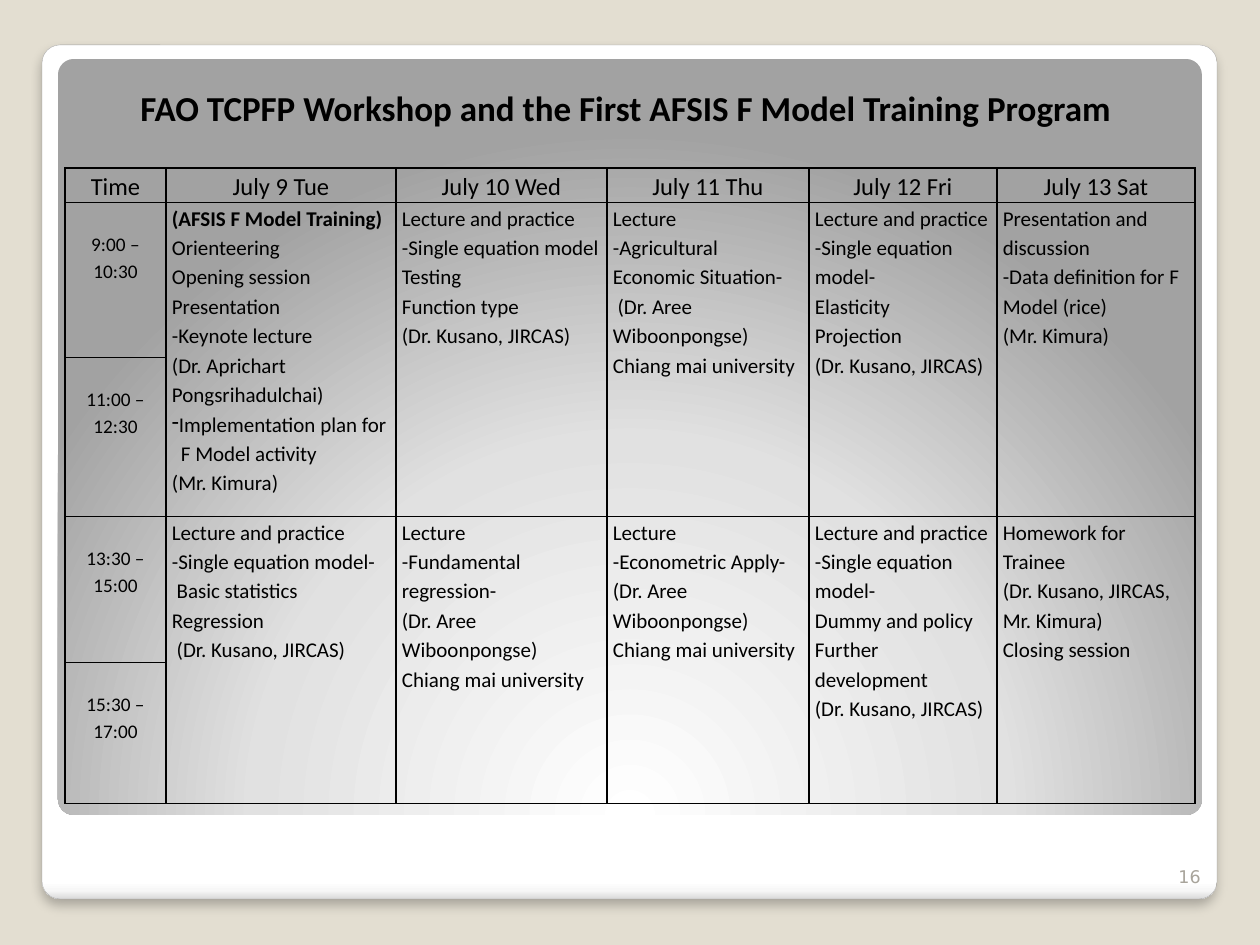
from lxml import etree
from pptx import Presentation
from pptx.dml.color import RGBColor
from pptx.enum.shapes import MSO_SHAPE
from pptx.enum.text import MSO_ANCHOR, PP_ALIGN
from pptx.oxml import parse_xml
from pptx.oxml.ns import qn
from pptx.util import Pt

PX = 914400 / 126
NS = 'xmlns:a="http://schemas.openxmlformats.org/drawingml/2006/main"'
LEFT, CENTER, RIGHT = PP_ALIGN.LEFT, PP_ALIGN.CENTER, PP_ALIGN.RIGHT
TOP, MIDDLE, BOTTOM = MSO_ANCHOR.TOP, MSO_ANCHOR.MIDDLE, MSO_ANCHOR.BOTTOM
ROUNDED = MSO_SHAPE.ROUNDED_RECTANGLE

COLORS = {"page": "E3DED1", "text": "000000", "number": "A8A49B", "edge": "A4A4A4"}
CARD_STOPS = [(0, "FFFFFF"), (98, "FFFFFF"), (99, "F7F7F7"), (100, "DADADA")]
PANEL_STOPS = [(0, "FFFFFF"), (55, "E1E1E1"), (100, "A2A2A2")]
CARD_PATH = '<a:lin ang="5400000" scaled="0"/>'
PANEL_PATH = ('<a:path path="circle"><a:fillToRect l="50000" t="175000" '
              'r="50000" b="-75000"/></a:path>')
SHADOW = (f'<a:outerShdw {NS} blurRad="76200" dist="50800" dir="5400000" algn="t" '
          'rotWithShape="0"><a:srgbClr val="000000"><a:alpha val="25000"/></a:srgbClr>'
          '</a:outerShdw>')

COLUMNS = [101, 230, 211, 202, 188, 198]
ROWS = [34, 155, 159, 146, 141]
HEADINGS = ["Time", "July 9 Tue", "July 10 Wed", "July 11 Thu", "July 12 Fri", "July 13 Sat"]
TIMES = ["9:00 – 10:30", "11:00 – 12:30", "13:30 – 15:00", "15:30 – 17:00"]
BOLD_LINE = "(AFSIS F Model Training)"
DASH_LINE = "Implementation plan for"
INDENTED_LINE = "F Model activity"
PRACTICE = "Lecture and practice"
KUSANO = "(Dr. Kusano, JIRCAS)"
AREE = "(Dr. Aree Wiboonpongse)"
CHIANG_MAI = "Chiang mai university"
SESSIONS = {
    1: [
        [BOLD_LINE, "Orienteering", "Opening session", "Presentation", "-Keynote lecture",
         "(Dr. Aprichart Pongsrihadulchai)", DASH_LINE, INDENTED_LINE, "(Mr. Kimura)"],
        [PRACTICE, "-Single equation model", "Testing", "Function type", KUSANO],
        ["Lecture", "-Agricultural Economic Situation-", " " + AREE, CHIANG_MAI],
        [PRACTICE, "-Single equation model-", "Elasticity", "Projection", KUSANO],
        ["Presentation and discussion", "-Data definition for F Model (rice)", "(Mr. Kimura)"],
    ],
    3: [
        [PRACTICE, "-Single equation model-", " Basic statistics", "Regression", " " + KUSANO],
        ["Lecture", "-Fundamental regression-", AREE, CHIANG_MAI],
        ["Lecture", "-Econometric Apply-", AREE, CHIANG_MAI],
        [PRACTICE, "-Single equation model-", "Dummy and policy", "Further development", KUSANO],
        ["Homework for Trainee", "(Dr. Kusano, JIRCAS,", "Mr. Kimura)", "Closing session"],
    ],
}


def px(length):
    return round(length * PX)


def set_attributes(target, values):
    for name, value in values.items():
        setattr(target, name, value)


def write_lines(frame, lines, size, align=LEFT, bold=False, spacing=1.0,
                font="Calibri", color="text"):
    for index, line in enumerate(lines):
        para = frame.paragraphs[0] if index == 0 else frame.add_paragraph()
        set_attributes(para, {"alignment": align, "line_spacing": spacing})
        span = para.add_run()
        span.text = line
        set_attributes(span.font, {"name": font, "size": Pt(size),
                                   "bold": bold or line == BOLD_LINE})
        span.font.color.rgb = RGBColor.from_string(COLORS[color])
        properties = para._p.get_or_add_pPr()
        if line == DASH_LINE:
            etree.SubElement(properties, qn("a:buChar")).set("char", "-")
        elif line == INDENTED_LINE:
            properties.set("marL", str(px(9)))


def add_panel(page, box, stops, path):
    panel = page.shapes.add_shape(ROUNDED, *map(px, box))
    panel.adjustments[0] = 0.021
    panel.shadow.inherit = False
    panel.line.fill.background()
    marks = "".join(f'<a:gs pos="{place * 1000}"><a:srgbClr val="{color}"/></a:gs>'
                    for place, color in stops)
    fill = parse_xml(f'<a:gradFill {NS} rotWithShape="1"><a:gsLst>{marks}</a:gsLst>{path}</a:gradFill>')
    panel.element.spPr.find(qn("a:prstGeom")).addnext(fill)
    return panel


def add_backdrop(page, box):
    left, top, width, height = box
    page.background.fill.solid()
    page.background.fill.fore_color.rgb = RGBColor.from_string(COLORS["page"])
    card = add_panel(page, box, CARD_STOPS, CARD_PATH)
    card.line.color.rgb = RGBColor.from_string(COLORS["edge"])
    card.line.width = Pt(0.16)
    card.element.spPr.find(qn("a:effectLst")).append(parse_xml(SHADOW))
    add_panel(page, (left + 16, top + 14, width - 31, height - 98), PANEL_STOPS, PANEL_PATH)


def add_title(page, box):
    title = page.shapes.title
    title.element.getparent().append(title.element)
    set_attributes(title, dict(zip(("left", "top", "width", "height"), map(px, box))))
    set_attributes(title.text_frame, {"word_wrap": True, "vertical_anchor": MIDDLE})
    write_lines(title.text_frame,
                ["FAO TCPFP Workshop and the First AFSIS F Model Training Program "],
                20, CENTER, bold=True)


def format_cell(cell):
    set_attributes(cell, {"margin_left": px(6), "margin_right": px(6), "margin_top": 0,
                          "margin_bottom": 0, "vertical_anchor": TOP})
    properties = cell._tc.get_or_add_tcPr()
    for side in ("lnL", "lnR", "lnT", "lnB"):
        properties.append(parse_xml(
            f'<a:{side} {NS} w="12700"><a:solidFill><a:srgbClr val="{COLORS["text"]}"/>'
            f'</a:solidFill></a:{side}>'))
    cell.fill.background()


def add_schedule(page, box):
    table = page.shapes.add_table(len(ROWS), len(COLUMNS), *map(px, box)).table
    set_attributes(table, {"first_row": False, "horz_banding": False})
    for column, width in zip(table.columns, COLUMNS):
        column.width = px(width)
    for row, height in zip(table.rows, ROWS):
        row.height = px(height)
    for cell in table.iter_cells():
        format_cell(cell)
    for number, heading in enumerate(HEADINGS):
        write_lines(table.cell(0, number).text_frame, [heading], 14, CENTER, spacing=1.15)
    for number, time in enumerate(TIMES, 1):
        cell = table.cell(number, 0)
        cell.margin_top = px(27)
        write_lines(cell.text_frame, [time], 11, CENTER, spacing=1.15)
    for row, days in SESSIONS.items():
        for column, lines in enumerate(days, 1):
            cell = table.cell(row, column)
            cell.merge(table.cell(row + 1, column))
            write_lines(cell.text_frame, lines, 12, spacing=1.15)


def add_page_number(page, box):
    frame = page.shapes.add_textbox(*map(px, box)).text_frame
    set_attributes(frame, {"word_wrap": True, "vertical_anchor": BOTTOM})
    write_lines(frame, ["16"], 10, RIGHT, font="DejaVu Sans", color="number")


def main():
    deck = Presentation()
    set_attributes(deck, {"slide_width": px(1260), "slide_height": px(945)})
    page = deck.slides.add_slide(deck.slide_layouts[5])
    add_backdrop(page, (42, 45, 1175, 854))
    add_title(page, (65, 80, 1130, 55))
    add_schedule(page, (65, 168, sum(COLUMNS), sum(ROWS)))
    add_page_number(page, (1150, 843, 63, 50))
    deck.save("out.pptx")


if __name__ == "__main__":
    main()
